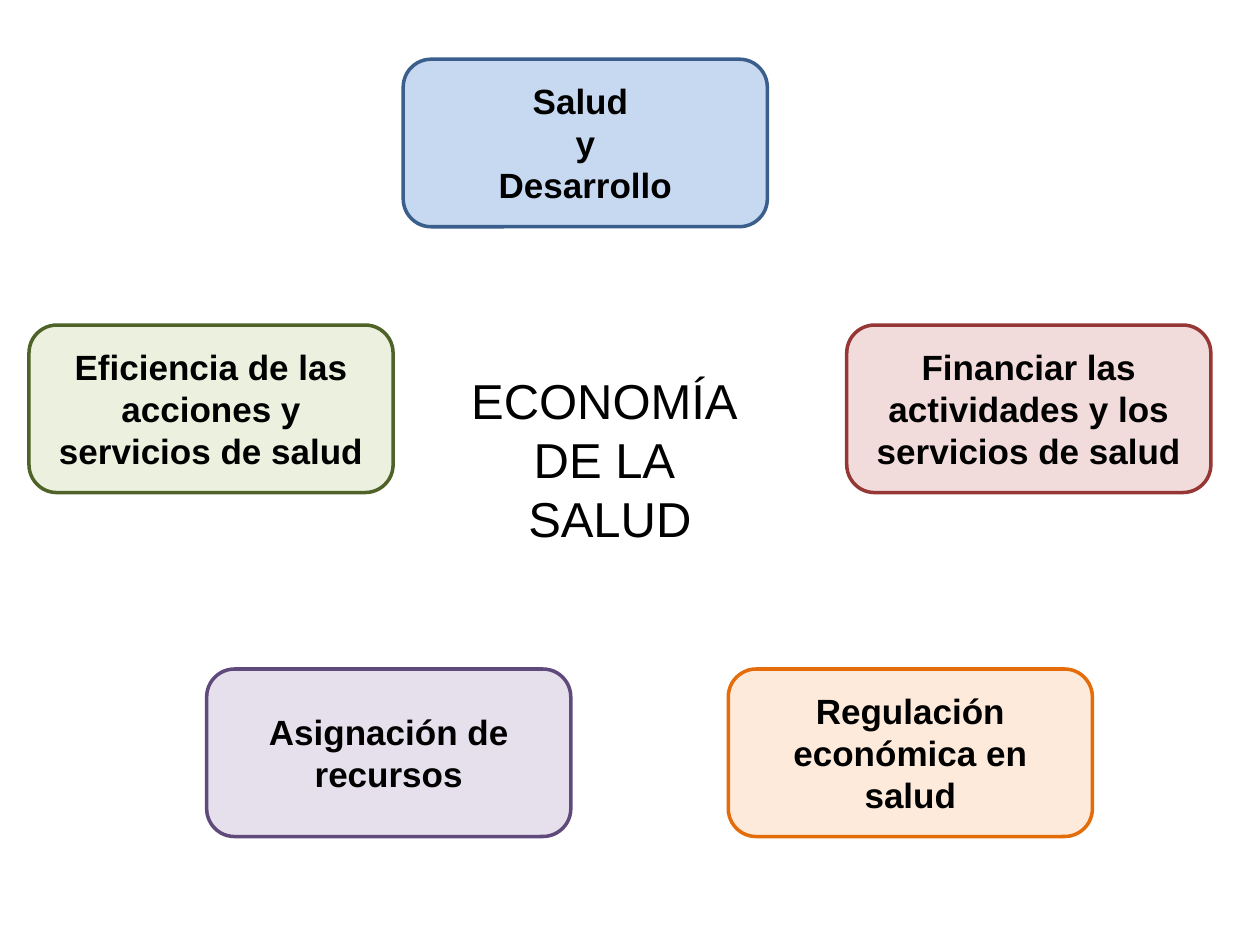
from pptx import Presentation
from pptx.dml.color import RGBColor
from pptx.enum.shapes import MSO_SHAPE
from pptx.enum.text import MSO_ANCHOR, MSO_AUTO_SIZE, PP_ALIGN
from pptx.util import Inches, Pt

COLORS = {
    "text": "000000",
    "blue fill": "C6D9F1", "blue line": "3A5F8C",
    "orange fill": "FDEADA", "orange line": "E46C0A",
    "purple fill": "E6E0EC", "purple line": "604A7B",
    "red fill": "F2DCDB", "red line": "953735",
    "green fill": "EBF1DE", "green line": "4F6228",
}
TITLE = ["ECONOMÍA ", "DE LA ", "SALUD"]
TOP, MIDDLE, BOTTOM = 0.47, 2.58, 5.31
TOPICS = [  # paragraphs, hue, left, top
    (["Salud ", "y", "Desarrollo"], "blue", 3.2, TOP),
    (["Regulación económica en salud"], "orange", 5.78, BOTTOM),
    (["Asignación de recursos"], "purple", 1.64, BOTTOM),
    (["Financiar las actividades y los servicios de salud"], "red", 6.72, MIDDLE),
    (["Eficiencia de las acciones y servicios de salud"], "green", 0.23, MIDDLE),
]
TOPIC_WIDTH, TOPIC_HEIGHT = 2.89, 1.33


def color(name):
    return RGBColor.from_string(COLORS[name])


def write(frame, lines, size, bold, anchor):
    frame.text = "\n".join(lines)
    frame.word_wrap = True
    frame.vertical_anchor = anchor
    for paragraph in frame.paragraphs:
        paragraph.alignment = PP_ALIGN.CENTER
        font = paragraph.font
        font.name, font.size, font.bold = "Arial", Pt(size), bold
        font.color.rgb = color("text")


def add_topic(slide, lines, hue, left, top):
    topic = slide.shapes.add_shape(
        MSO_SHAPE.ROUNDED_RECTANGLE, Inches(left), Inches(top),
        Inches(TOPIC_WIDTH), Inches(TOPIC_HEIGHT))
    topic.shadow.inherit = False
    topic.fill.solid()
    topic.fill.fore_color.rgb = color(f"{hue} fill")
    topic.line.color.rgb = color(f"{hue} line")
    topic.line.width = Pt(2)
    write(topic.text_frame, lines, 20, True, MSO_ANCHOR.MIDDLE)


def main():
    prs = Presentation()
    prs.slide_width, prs.slide_height = Inches(10), Inches(7.5)
    title_only = prs.slide_layouts[5]
    slide = prs.slides.add_slide(title_only)

    title = slide.shapes.title
    title.left, title.top = Inches(3.59), Inches(2.89)
    title.width, title.height = Inches(2.5), Inches(1.51)
    write(title.text_frame, TITLE, 28, False, MSO_ANCHOR.TOP)
    title.text_frame.auto_size = MSO_AUTO_SIZE.SHAPE_TO_FIT_TEXT

    for topic in TOPICS:
        add_topic(slide, *topic)
    prs.save("out.pptx")


if __name__ == "__main__":
    main()
